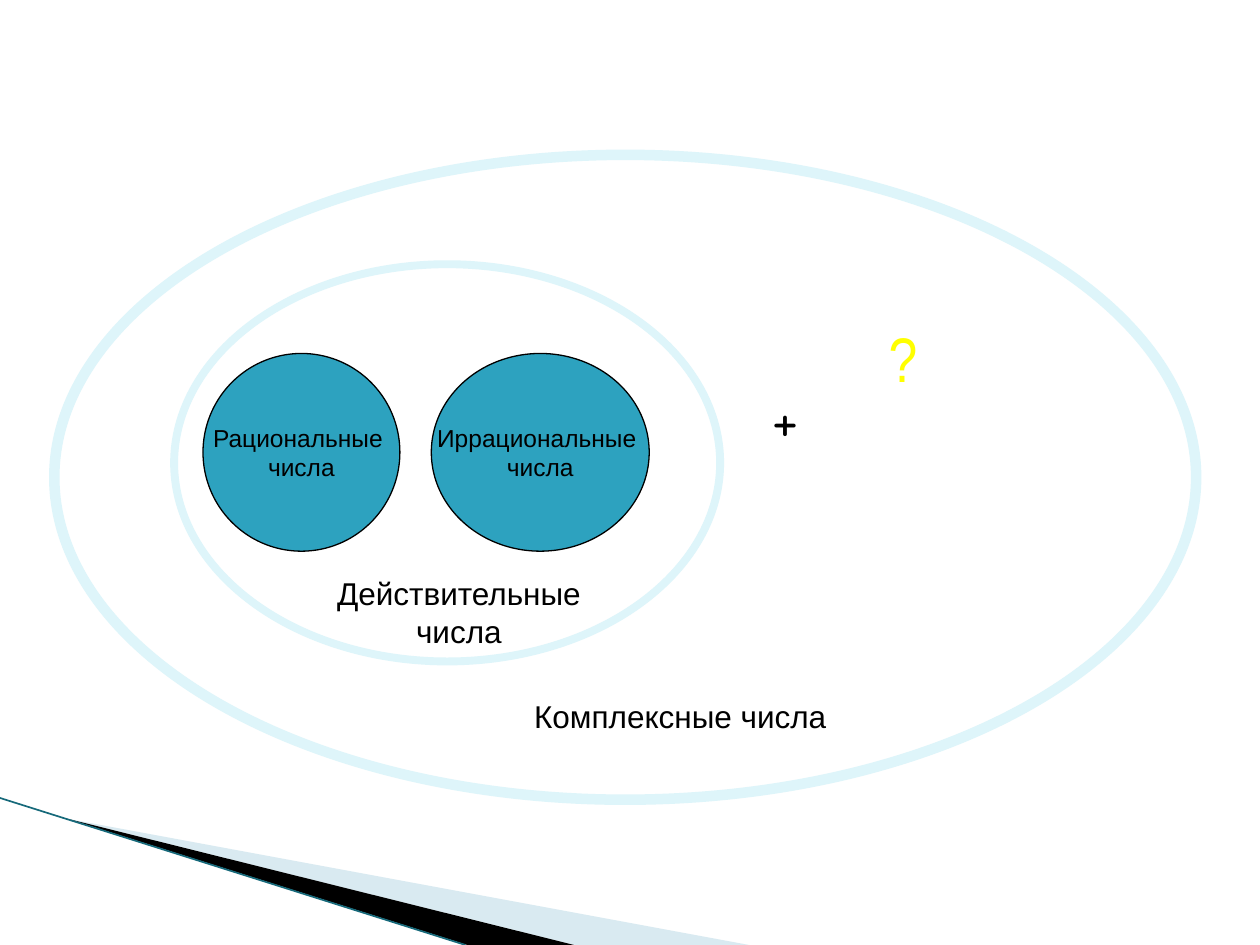
from lxml.etree import SubElement
from pptx import Presentation
from pptx.dml.color import RGBColor
from pptx.enum.shapes import MSO_CONNECTOR as Connector, MSO_SHAPE as Shape
from pptx.enum.text import MSO_ANCHOR as Anchor, PP_ALIGN as Align
from pptx.oxml.ns import qn
from pptx.util import Pt

COLORS = {
    "ring": "DEF5FA",
    "disc": "2DA2BF",
    "ink": "000000",
    "question": "FFFF00",
    "pale_wedge": "A0CBDC",
    "edge": "16697A",
}


def color(name):
    return RGBColor.from_string(COLORS[name])


def write(shape, text, size, font="Arial", ink="ink", align=Align.CENTER, wrap=True):
    frame = shape.text_frame
    frame.word_wrap = wrap
    frame.text = text
    for paragraph in frame.paragraphs:
        paragraph.alignment = align
        for run in paragraph.runs:
            run.font.size = Pt(size)
            run.font.name = font
            run.font.color.rgb = color(ink)


def add_label(slide, box, text, size, **style):
    label = slide.shapes.add_textbox(*map(Pt, box))
    label.text_frame.vertical_anchor = Anchor.TOP
    write(label, text, size, **style)


def add_ellipse(slide, box, line, width, fill=None):
    ellipse = slide.shapes.add_shape(Shape.OVAL, *map(Pt, box))
    ellipse.shadow.inherit = False
    if fill:
        ellipse.fill.solid()
        ellipse.fill.fore_color.rgb = color(fill)
    else:
        ellipse.fill.background()
    ellipse.line.color.rgb = color(line)
    ellipse.line.width = Pt(width)
    return ellipse


def add_disc(slide, box, text):
    disc = add_ellipse(slide, box, "ink", 0.75, "disc")
    disc.text_frame.vertical_anchor = Anchor.MIDDLE
    write(disc, text, 14, wrap=False)


def add_wedge(slide, points, fill, opacity=100):
    builder = slide.shapes.build_freeform(*points[0], scale=Pt(1))
    builder.add_line_segments(points[1:], close=True)
    wedge = builder.convert_to_shape()
    wedge.shadow.inherit = False
    wedge.fill.solid()
    wedge.fill.fore_color.rgb = color(fill)
    wedge.line.fill.background()
    if opacity < 100:
        tint = wedge.fill._xPr.find(qn("a:solidFill"))[0]
        SubElement(tint, qn("a:alpha")).set("val", str(opacity * 1000))


def add_corner(slide, left, top, width, height):
    bottom = top + height
    tip = (left + 39, top + 12)
    add_wedge(slide, [tip, (left + 428, bottom), (left + 328, bottom)], "pale_wedge", 40)
    add_wedge(slide, [tip, (left + 328, bottom), (left + 267, bottom)], "ink")
    edge = slide.shapes.add_connector(
        Connector.STRAIGHT, Pt(left), Pt(top), Pt(left + width), Pt(bottom))
    edge.line.color.rgb = color("edge")
    edge.line.width = Pt(0.95)
    SubElement(edge._element.spPr, qn("a:effectLst"))


def add_real_numbers(slide, left, top, width, height):
    disc_top = top + 51
    add_disc(slide, (left + 147, disc_top, 124.5, 113), "Иррациональные \nчисла")
    add_disc(slide, (left + 16.5, disc_top, 112.5, 113), "Рациональные \nчисла")
    add_ellipse(slide, (left, top, width, height), "ring", 4.5)
    add_label(slide, (left + 72, top + 173.5, 181.5, 50.5), "Действительные числа", 18)


def add_complex_numbers(slide, left, top, width, height):
    add_real_numbers(slide, left + 68.5, top + 62.5, 312, 227)
    add_label(slide, (left + 402.5, top + 124.5, 67.5, 50.5), "+", 36,
              font="Comic Neue", align=Align.LEFT)
    add_label(slide, (left + 459.5, top + 90.5, 51, 119), "?", 36,
              font="Arial Narrow", ink="question", wrap=False)
    add_ellipse(slide, (left, top, width, height), "ring", 6)
    add_label(slide, (left + 216, top + 306, 283.5, 29), "Комплексные числа", 18)


def main():
    presentation = Presentation()
    presentation.slide_width, presentation.slide_height = Pt(720), Pt(540)
    slide = presentation.slides.add_slide(presentation.slide_layouts[6])
    add_corner(slide, 0, 456, 266, 84)
    add_complex_numbers(slide, 31, 88.5, 652.5, 368.5)
    presentation.save("out.pptx")


if __name__ == "__main__":
    main()
